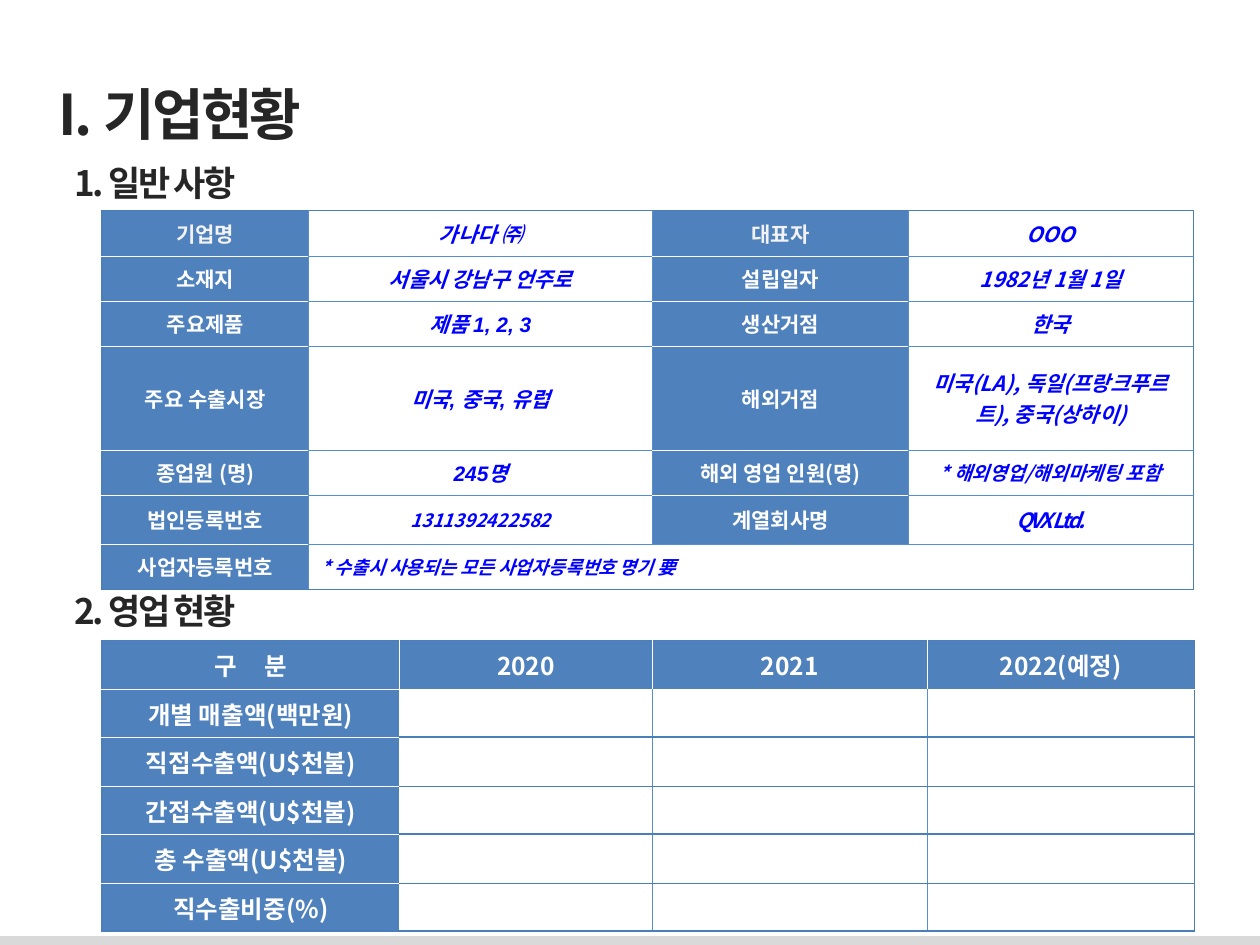
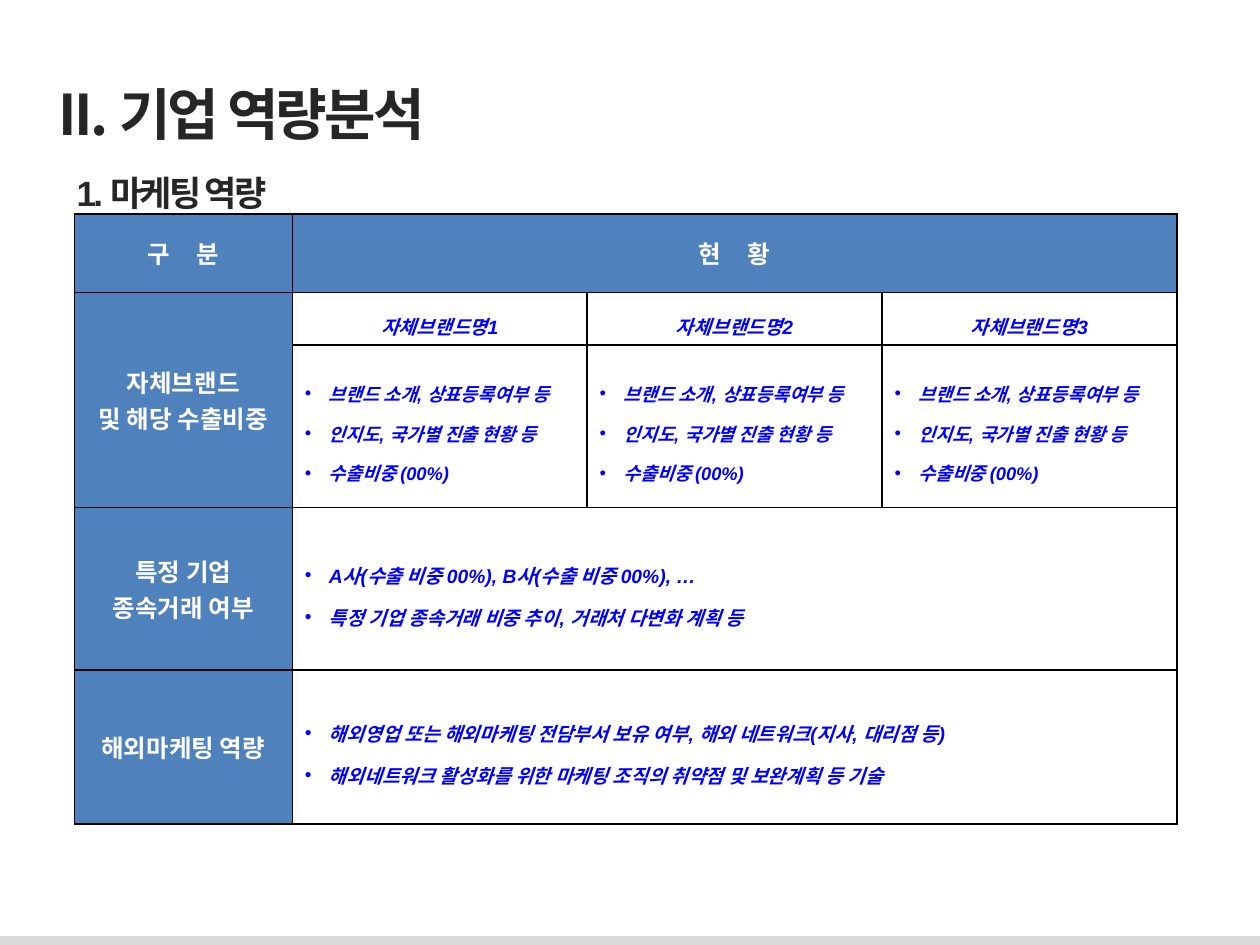
import dataclasses
from typing import Optional

import pptx
import pptx.dml.color
import pptx.enum.shapes
import pptx.enum.text
import pptx.oxml.ns
import pptx.presentation
import pptx.slide
import pptx.util
from lxml import etree
from pptx.util import Inches

ALIGN = pptx.enum.text.PP_ALIGN
MIDDLE = pptx.enum.text.MSO_ANCHOR.MIDDLE


# Theme
@dataclasses.dataclass(frozen=True)
class Theme:
    heading: str = "262626"
    label_fill: str = "4F81BD"
    label: str = "FFFFFF"
    soft_label: str = "F2F2F2"
    entry: str = "0000FF"
    edge: str = "4B7EBC"
    inner: str = "558ED5"
    rule: str = "000000"
    band: str = "D9D9D9"
    korean: str = "Noto Sans CJK KR"
    latin: str = "Arial"
    title_size: float = 32
    section_size: float = 20
    large_size: float = 14
    cell_size: float = 12
    note_size: float = 11
    small_size: float = 10.5


THEME = Theme()


@dataclasses.dataclass(frozen=True)
class Style:
    size: float
    color: str
    font: str = THEME.korean
    italic: bool = False
    spacing: float = 0
    align: Optional[ALIGN] = ALIGN.CENTER
    line_spacing: Optional[float] = None
    bullet: bool = False
    word_gap: float = 0
    fill: Optional[str] = None


LABEL = Style(THEME.cell_size, THEME.label, fill=THEME.label_fill)
SOFT_LABEL = dataclasses.replace(LABEL, color=THEME.soft_label)
LARGE_LABEL = dataclasses.replace(LABEL, size=THEME.large_size)
SPACED_LABEL = dataclasses.replace(LARGE_LABEL, word_gap=12)
ARIAL_LABEL = dataclasses.replace(LARGE_LABEL, font=THEME.latin)
ARIAL_SPACED = dataclasses.replace(ARIAL_LABEL, word_gap=12)
ENTRY = Style(THEME.cell_size, THEME.entry, italic=True)
ARIAL_ENTRY = dataclasses.replace(ENTRY, font=THEME.latin)
NOTE = dataclasses.replace(ENTRY, size=THEME.note_size)
SMALL = dataclasses.replace(ENTRY, size=THEME.small_size)
TIGHT = dataclasses.replace(SMALL, size=THEME.cell_size, spacing=-1.5)
SMALL_LEFT = dataclasses.replace(SMALL, align=ALIGN.LEFT)
BRAND = dataclasses.replace(NOTE, font=THEME.latin, line_spacing=1.5)
BULLETS = dataclasses.replace(BRAND, align=ALIGN.LEFT, bullet=True)
SMALL_BULLETS = dataclasses.replace(BULLETS, size=THEME.small_size)


@dataclasses.dataclass(frozen=True)
class Line:
    color: str
    width: float


@dataclasses.dataclass(frozen=True)
class Lines:
    """Outer edge, inner lines, and inner lines that touch a label."""
    edge: Line
    vertical: Line
    horizontal: Line
    label_vertical: Line
    label_horizontal: Line


EDGE = Line(THEME.edge, 0.75)
INNER = Line(THEME.inner, 0.75)
FINE = Line(THEME.inner, 0.25)
WHITE = Line(THEME.label, 0.25)
BLACK = Line(THEME.rule, 1)
PROFILE_LINES = Lines(EDGE, INNER, FINE, INNER, WHITE)
SALES_LINES = Lines(EDGE, INNER, EDGE, WHITE, WHITE)
BLACK_LINES = Lines(BLACK, BLACK, BLACK, BLACK, BLACK)


@dataclasses.dataclass(frozen=True)
class Cell:
    text: str
    style: Style
    columns: int = 1
    rows: int = 1


@dataclasses.dataclass(frozen=True)
class Grid:
    left: float
    top: float
    widths: list[float]
    heights: list[float]
    lines: Lines
    rows: list[list[Cell]]


# Text
def write_text(frame, text: str, *, size: float, color: str, font: str = THEME.korean,
               italic: bool = False, spacing: float = 0, align: Optional[ALIGN] = None,
               line_spacing: Optional[float] = None, bullet: bool = False,
               hanging: float = 0, word_gap: float = 0) -> None:
    qn = pptx.oxml.ns.qn
    hanging = 0.19 if bullet else hanging
    for index, content in enumerate(text.split("\n")):
        paragraph = frame.paragraphs[0] if index == 0 else frame.add_paragraph()
        paragraph.alignment = align
        if line_spacing:
            paragraph.line_spacing = line_spacing
        properties = paragraph._p.get_or_add_pPr()
        if hanging:
            properties.set("marL", str(Inches(hanging)))
            properties.set("indent", str(-Inches(hanging)))
        if bullet:
            etree.SubElement(properties, qn("a:buFont")).set("typeface", THEME.latin)
            etree.SubElement(properties, qn("a:buChar")).set("char", "•")
        if not content:
            end = etree.SubElement(paragraph._p, qn("a:endParaRPr"))
            end.set("sz", str(int(size * 100)))
            continue
        # A widened word gap is a run of its own
        before, space, after = content.partition(" ") if word_gap else (content, "", "")
        for piece, gap in ((before, spacing), (space, word_gap), (after, spacing)):
            if not piece:
                continue
            run = paragraph.add_run()
            run.text = piece
            run.font.size = pptx.util.Pt(size)
            run.font.bold = True
            run.font.italic = italic
            run.font.color.rgb = pptx.dml.color.RGBColor.from_string(color)
            run.font.name = font
            run_properties = run._r.get_or_add_rPr()
            etree.SubElement(run_properties, qn("a:ea")).set("typeface", THEME.korean)
            if gap:
                run_properties.set("spc", str(int(gap * 100)))


def add_heading(slide: pptx.slide.Slide, text: str, left: float, top: float, width: float,
                height: float, *, size: float = THEME.section_size, wrap: bool = True,
                hanging: float = 0, font: str = THEME.korean) -> None:
    box = slide.shapes.add_textbox(Inches(left), Inches(top), Inches(width), Inches(height))
    box.text_frame.word_wrap = wrap
    write_text(box.text_frame, text, size=size, color=THEME.heading, font=font,
               spacing=-1.5, hanging=hanging)


# Tables
def add_border(cell, side: str, line: Line) -> None:
    qn = pptx.oxml.ns.qn
    border = etree.SubElement(cell._tc.get_or_add_tcPr(), qn(f"a:ln{side}"))
    border.set("w", str(pptx.util.Pt(line.width)))
    fill = etree.SubElement(border, qn("a:solidFill"))
    etree.SubElement(fill, qn("a:srgbClr")).set("val", line.color)


def place_cells(grid: Grid) -> dict[tuple[int, int], tuple[Cell, int, int]]:
    """Map each position to the cell that covers it and that cell's start."""
    owners: dict[tuple[int, int], tuple[Cell, int, int]] = {}
    for row, cells in enumerate(grid.rows):
        column = 0
        for cell in cells:
            while (row, column) in owners:
                column += 1
            for down in range(cell.rows):
                for across in range(cell.columns):
                    owners[row + down, column + across] = (cell, row, column)
    return owners


def add_grid(slide: pptx.slide.Slide, grid: Grid) -> None:
    table = slide.shapes.add_table(
        len(grid.heights), len(grid.widths), Inches(grid.left), Inches(grid.top),
        Inches(sum(grid.widths)), Inches(sum(grid.heights))).table
    table.first_row = table.horz_banding = False
    for column, width in zip(table.columns, grid.widths):
        column.width = Inches(width)
    for row, height in zip(table.rows, grid.heights):
        row.height = Inches(height)

    owners = place_cells(grid)
    lines = grid.lines
    for (row, column), (cell, top, left) in owners.items():
        target = table.cell(row, column)
        sides = {"L": (top, left - 1), "R": (top, left + cell.columns),
                 "T": (top - 1, left), "B": (top + cell.rows, left)}
        for side, position in sides.items():
            if position not in owners:
                line = lines.edge
            else:
                touches_label = cell.style.fill or owners[position][0].style.fill
                if side in "LR":
                    line = lines.label_vertical if touches_label else lines.vertical
                else:
                    line = lines.label_horizontal if touches_label else lines.horizontal
            add_border(target, side, line)
        if cell.style.fill:
            target.fill.solid()
            target.fill.fore_color.rgb = pptx.dml.color.RGBColor.from_string(cell.style.fill)
        else:
            target.fill.background()
        target.vertical_anchor = MIDDLE
        text_format = dataclasses.asdict(cell.style)
        del text_format["fill"]
        is_start = (row, column) == (top, left)
        write_text(target.text_frame, cell.text if is_start else "", **text_format)
    for (row, column), (cell, top, left) in owners.items():
        if (row, column) == (top, left) and cell.rows * cell.columns > 1:
            table.cell(row, column).merge(
                table.cell(row + cell.rows - 1, column + cell.columns - 1))


# Slides
def add_page(presentation: pptx.presentation.Presentation, title: str,
             title_width: float) -> pptx.slide.Slide:
    slide = presentation.slides.add_slide(presentation.slide_layouts[6])
    band = slide.shapes.add_shape(pptx.enum.shapes.MSO_SHAPE.RECTANGLE,
                                  0, Inches(7.43), Inches(10), Inches(0.07))
    band.shadow.inherit = False
    band.fill.solid()
    band.fill.fore_color.rgb = pptx.dml.color.RGBColor.from_string(THEME.band)
    band.line.fill.background()
    add_heading(slide, title, 0.37, 0.58, title_width, 0.64,
                size=THEME.title_size, wrap=False)
    return slide


def add_company_status(presentation: pptx.presentation.Presentation) -> None:
    slide = add_page(presentation, "I. 기업현황", 2.26)
    profile = [
        ("기업명", SOFT_LABEL, "가나다 ㈜", ARIAL_ENTRY, "대표자", "OOO", ENTRY),
        ("소재지", LABEL, "서울시 강남구 언주로", ARIAL_ENTRY, "설립일자", "1982년 1월 1일", ENTRY),
        ("주요제품", LABEL, "제품 1, 2, 3", ARIAL_ENTRY, "생산거점", "한국", ENTRY),
        ("주요 수출시장", LABEL, "미국, 중국, 유럽", ARIAL_ENTRY, "해외거점",
         "미국(LA), 독일(프랑크푸르트), 중국(상하이)", ENTRY),
        ("종업원 (명)", LABEL, "245명", ARIAL_ENTRY, "해외 영업 인원(명)",
         "* 해외영업/해외마케팅 포함", NOTE),
        ("법인등록번호", LABEL, "1311392422582", SMALL, "계열회사명", "QVX Ltd.", TIGHT),
    ]
    rows = [[Cell(name, label), Cell(value, style), Cell(other, label), Cell(detail, other_style)]
            for name, label, value, style, other, detail, other_style in profile]
    rows.append([Cell("사업자등록번호", LABEL),
                 Cell("* 수출시 사용되는 모든 사업자등록번호 명기 要", SMALL_LEFT, columns=3)])
    add_heading(slide, "1. 일반 사항", 0.49, 1.23, 6.85, 0.47, hanging=0.38)
    add_grid(slide, Grid(0.81, 1.67, [1.64, 2.73, 2.03, 2.26],
                         [0.36, 0.36, 0.36, 0.82, 0.36, 0.39, 0.36], PROFILE_LINES, rows))

    measures = ["개별 매출액(백만원)", "직접수출액(U$천불)", "간접수출액(U$천불)",
                "총 수출액(U$천불)", "직수출비중(%)"]
    header = [Cell("구 분", SPACED_LABEL)]
    header += [Cell(year, LARGE_LABEL) for year in ("2020", "2021", "2022(예정)")]
    rows = [header] + [[Cell(measure, LARGE_LABEL)] + [Cell("", ENTRY)] * 3
                       for measure in measures]
    add_heading(slide, "2. 영업 현황", 0.49, 4.63, 6.85, 0.47, hanging=0.38)
    add_grid(slide, Grid(0.81, 5.08, [2.36, 2.01, 2.18, 2.12],
                         [0.39, 0.38] * 3, SALES_LINES, rows))


def add_capability_analysis(presentation: pptx.presentation.Presentation) -> None:
    slide = add_page(presentation, "II. 기업 역량분석", 3.37)
    brand_points = "브랜드 소개, 상표등록여부 등\n인지도, 국가별 진출 현황 등\n수출비중 (00%)"
    rows = [
        [Cell("구 분", ARIAL_SPACED), Cell("현 황", ARIAL_SPACED, columns=3)],
        [Cell("자체브랜드\n및 해당 수출비중", ARIAL_LABEL, rows=2)]
        + [Cell(f"자체브랜드명{number}", BRAND) for number in (1, 2, 3)],
        [Cell(brand_points, SMALL_BULLETS)] * 3,
        [Cell("특정 기업\n종속거래 여부", ARIAL_LABEL),
         Cell("A사(수출 비중 00%), B사(수출 비중 00%), …\n"
              "특정 기업 종속거래 비중 추이, 거래처 다변화 계획 등", BULLETS, columns=3)],
        [Cell("해외마케팅 역량", ARIAL_LABEL),
         Cell("해외영업 또는 해외마케팅 전담부서 보유 여부, 해외 네트워크(지사, 대리점 등)\n"
              "해외네트워크 활성화를 위한 마케팅 조직의 취약점 및 보완계획 등 기술",
              BULLETS, columns=3)],
    ]
    add_grid(slide, Grid(0.59, 1.7, [1.73] + [2.34] * 3,
                         [0.62, 0.42, 1.29, 1.29, 1.22], BLACK_LINES, rows))
    add_heading(slide, "1. 마케팅 역량", 0.51, 1.31, 2.76, 0.44, font=THEME.latin)


def main() -> None:
    presentation = pptx.Presentation()
    presentation.slide_width = Inches(10)
    presentation.slide_height = Inches(7.5)
    add_company_status(presentation)
    add_capability_analysis(presentation)
    presentation.save("out.pptx")


if __name__ == "__main__":
    main()
